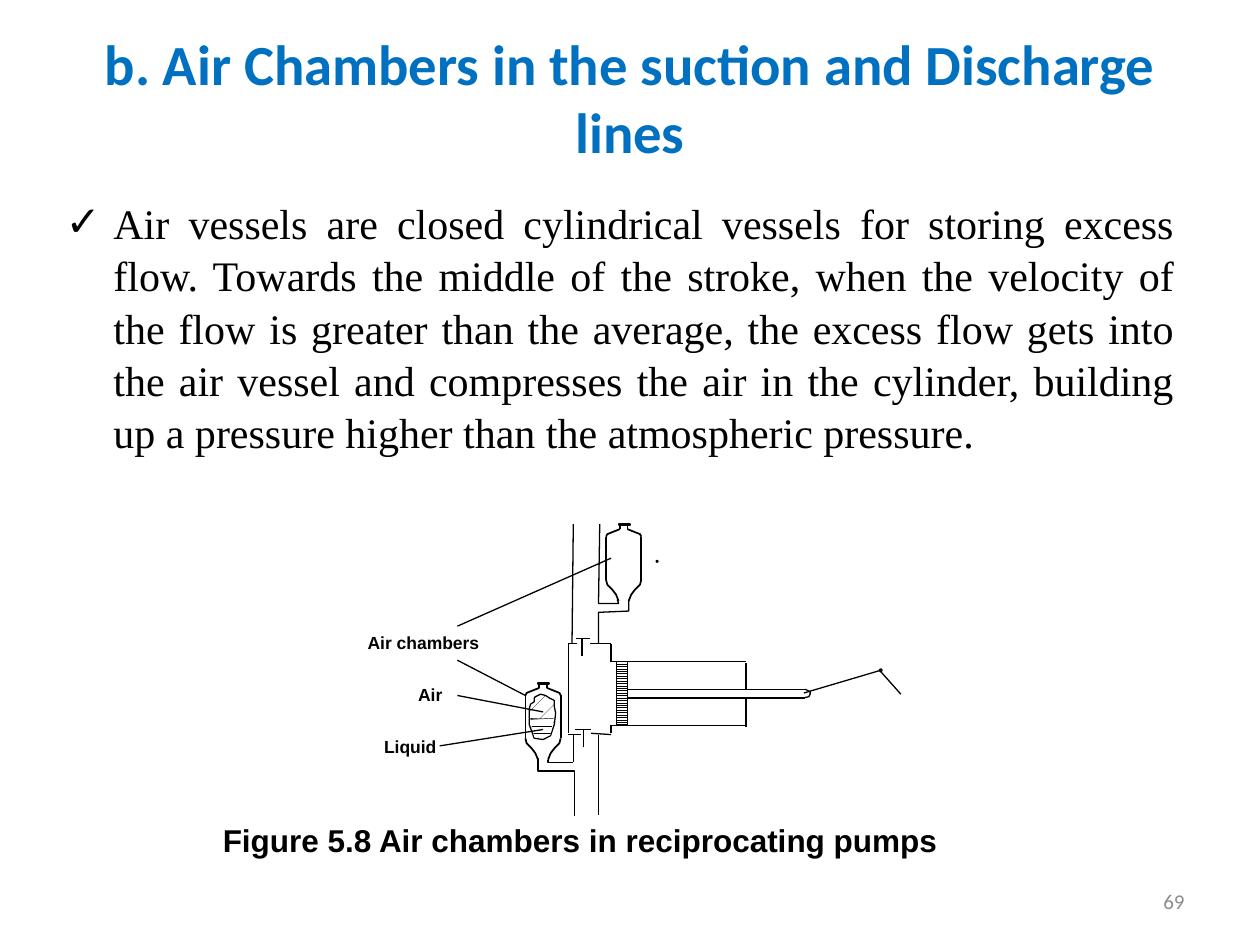
"""Build a slide on air chambers in reciprocating pumps."""
from pptx import Presentation, util as u
from pptx.dml.color import RGBColor
from pptx.enum import dml, shapes as sh, text as tx
from pptx.oxml.ns import qn
from lxml import etree

THEME = {
    "blue": "0070C0", "ink": "000000", "paper": "FFFFFF", "gray": "8C8C8C",
    "head": "Calibri", "serif": "Times New Roman", "sans": "Arial",
    "title": 32.4, "body": 24, "caption": 18, "label": 10, "number": 12,
    "hair": 0.25, "thin": 0.75, "wall": 1,
}
TITLE = "b. Air Chambers in the suction and Discharge lines"
BODY = ("Air vessels are closed cylindrical vessels for storing excess flow. "
        "Towards the middle of the stroke, when the velocity of the flow is "
        "greater than the average, the excess flow gets into the air vessel "
        "and compresses the air in the cylinder, building up a pressure "
        "higher than the atmospheric pressure.")
CAPTION = "Figure 5.8 Air chambers in reciprocating pumps"
LABELS = [
    ("Air chambers", (2.82, 4.97, 1.36, 0.27)),
    ("Air", (3.22, 5.38, 0.95, 0.27)),
    ("Liquid", (2.95, 5.79, 0.82, 0.27)),
]
BARREL = [
    (4.85, 5.76, 4.85, 5.82), (4.85, 5.25, 5.92, 5.25),
    (4.84, 5.76, 5.92, 5.76), (4.98, 5.47, 6.39, 5.47),
    (4.98, 5.54, 6.39, 5.54), (5.92, 5.26, 5.92, 5.47),
    (5.92, 5.54, 5.92, 5.77),
]
CHEST = [
    (4.85, 5.25, 4.85, 5.11), (4.85, 5.11, 4.68, 5.11),
    (4.85, 5.83, 4.69, 5.82), (4.58, 5.11, 4.51, 5.11),
    (4.61, 5.83, 4.51, 5.83), (4.51, 5.11, 4.51, 5.82),
]
VALVES = [
    (4.62, 5.21, 4.62, 5.07), (4.57, 5.07, 4.68, 5.07),
    (4.63, 5.93, 4.63, 5.79), (4.56, 5.79, 4.69, 5.79),
]
PIPES = [
    (4.55, 5.83, 4.55, 6.05), (4.75, 5.83, 4.75, 6.47),
    (4.54, 5.11, 4.55, 4.16), (4.75, 4.79, 4.76, 4.16),
]
CRANK = [(6.38, 5.5, 6.99, 5.32), (6.99, 5.33, 7.15, 5.51)]
LEADS = [
    (3.63, 5.24, 4.17, 5.52), (4.85, 4.43, 3.63, 4.97),
    (3.63, 5.52, 4.31, 5.65), (3.49, 5.92, 4.31, 5.79),
]
BENDS = [
    [(4.99, 4.76), (4.99, 4.85), (4.75, 4.86), (4.75, 5.11)],
    [(4.9, 4.76), (4.91, 4.79), (4.75, 4.79)],
    [(4.27, 6.02), (4.27, 6.12), (4.56, 6.12), (4.56, 6.48)],
    [(4.35, 6.03), (4.35, 6.05), (4.55, 6.05)],
    [(6.39, 5.47), (6.41, 5.48), (6.43, 5.49), (6.43, 5.51), (6.42, 5.53),
     (6.37, 5.54)],
]
VESSELS = [(4.81, 4.16), (4.17, 5.42)]
SPAN = 0.28
WALLS = [
    [(0, 0.1), (0, 0.44)],
    [(0, 0.1), (0.01, 0.08), (0.06, 0.06), (0.11, 0.04)],
    [(0.11, 0.04), (0.11, 0)],
    [(0, 0.44), (0.01, 0.48), (0.05, 0.52), (0.08, 0.56), (0.1, 0.61)],
]
AIR = [
    (4.25, 5.53), (4.29, 5.51), (4.33, 5.52), (4.36, 5.54), (4.4, 5.56),
    (4.4, 5.61), (4.41, 5.66), (4.4, 5.75), (4.37, 5.84), (4.31, 5.87),
    (4.24, 5.86), (4.2, 5.75), (4.2, 5.63), (4.21, 5.59), (4.24, 5.57),
    (4.24, 5.54),
]
LIQUID = [
    (4.21, 5.7), (4.39, 5.71), (4.39, 5.74), (4.38, 5.78), (4.37, 5.83),
    (4.31, 5.86), (4.24, 5.85), (4.22, 5.75),
]


def tint(key):
    return RGBColor.from_string(THEME[key])


def put(shape, box):
    shape.left, shape.top, shape.width, shape.height = map(u.Inches, box)


def write(shape, words, face, size, hue="ink", bold=False, align=None):
    frame = shape.text_frame
    frame.word_wrap = True
    para = frame.paragraphs[0]
    para.alignment = align
    run = para.add_run()
    run.text = words
    font = run.font
    font.name, font.size, font.bold = THEME[face], u.Pt(THEME[size]), bold
    font.color.rgb = tint(hue)
    return para


def note(home, box, *style, **more):
    shape = home.add_textbox(*map(u.Inches, box))
    return shape, write(shape, *style, **more)


def line(home, ends, weight="thin"):
    link = home.add_connector(sh.MSO_CONNECTOR.STRAIGHT, *map(u.Inches, ends))
    link.line.color.rgb = tint("ink")
    link.line.width = u.Pt(THEME[weight])
    etree.SubElement(link._element.spPr, qn("a:effectLst"))


def ink(shape, weight="thin", hatch=None, solid=None):
    shape.shadow.inherit = False
    if hatch is not None:
        shape.fill.patterned()
        shape.fill.pattern = hatch
        shape.fill.fore_color.rgb = tint("ink")
        shape.fill.back_color.rgb = tint("paper")
    elif solid:
        shape.fill.solid()
        shape.fill.fore_color.rgb = tint(solid)
    else:
        shape.fill.background()
    if weight:
        shape.line.color.rgb = tint("ink")
        shape.line.width = u.Pt(THEME[weight])
    else:
        shape.line.fill.background()


def trace(home, pts, weight="thin", hatch=None, close=False):
    pts = [(u.Inches(x), u.Inches(y)) for x, y in pts]
    pen = home.build_freeform(*pts[0])
    pen.add_line_segments(pts[1:], close=close)
    ink(pen.convert_to_shape(), weight, hatch)


def block(home, kind, box, **style):
    ink(home.add_shape(kind, *map(u.Inches, box)), **style)


def vessel(home, x, y):
    for wall in WALLS:
        for flip in (False, True):
            pts = [(x + (SPAN - a if flip else a), y + b) for a, b in wall]
            if len(pts) == 2:
                line(home, pts[0] + pts[1], "wall")
            else:
                trace(home, pts, "wall")
    block(home, sh.MSO_SHAPE.RECTANGLE, (x + 0.1, y, 0.09, 0.01),
          weight="wall", solid="paper")


def draw(home):
    for ends in BARREL + CHEST + VALVES + PIPES + CRANK:
        line(home, ends)
    for pts in BENDS:
        trace(home, pts)
    block(home, sh.MSO_SHAPE.RECTANGLE, (4.89, 5.25, 0.09, 0.51),
          hatch=dml.MSO_PATTERN.LIGHT_HORIZONTAL)
    block(home, sh.MSO_SHAPE.OVAL, (6.98, 5.31, 0.02, 0.02))
    block(home, sh.MSO_SHAPE.OVAL, (5.21, 4.45, 0.01, 0.01), weight="wall")
    for spot in VESSELS:
        vessel(home, *spot)
    trace(home, AIR, "thin", dml.MSO_PATTERN.PERCENT_5, True)
    trace(home, LIQUID, None, dml.MSO_PATTERN.DASHED_HORIZONTAL, True)
    line(home, (4.21, 5.71, 4.4, 5.7), "hair")
    for ends in LEADS:
        line(home, ends)
    for words, box in LABELS:
        note(home, box, words, "sans", "label", bold=True)
    para = note(home, (1.17, 6.47, 7, 0.41), CAPTION, "sans", "caption",
                bold=True, align=tx.PP_ALIGN.JUSTIFY)[1]
    para._p.get_or_add_pPr().set("indent", str(u.Inches(0.5)))


def main():
    deck = Presentation()
    deck.slide_width, deck.slide_height = u.Inches(10), u.Inches(7.5)
    slide = deck.slides.add_slide(deck.slide_layouts[1])
    title, body = slide.placeholders
    put(title, (0.5, 0.14, 9, 1.25))
    title.text_frame.vertical_anchor = tx.MSO_ANCHOR.MIDDLE
    write(title, TITLE, "head", "title", "blue", True, tx.PP_ALIGN.CENTER)
    put(body, (0.42, 1.5, 9, 2.25))
    para = write(body, BODY, "serif", "body", align=tx.PP_ALIGN.JUSTIFY)
    para.line_spacing = 1.04
    props = para._p.get_or_add_pPr()
    props.set("marL", str(u.Inches(0.38)))
    props.set("indent", str(-u.Inches(0.38)))
    etree.SubElement(props, qn("a:buChar")).set("char", "✓")
    draw(slide.shapes.add_group_shape().shapes)
    page = note(slide.shapes, (7.17, 6.95, 2.33, 0.4), "69", "head", "number",
                "gray", align=tx.PP_ALIGN.RIGHT)[0]
    page.text_frame.vertical_anchor = tx.MSO_ANCHOR.MIDDLE
    deck.save("out.pptx")


if __name__ == "__main__":
    main()
